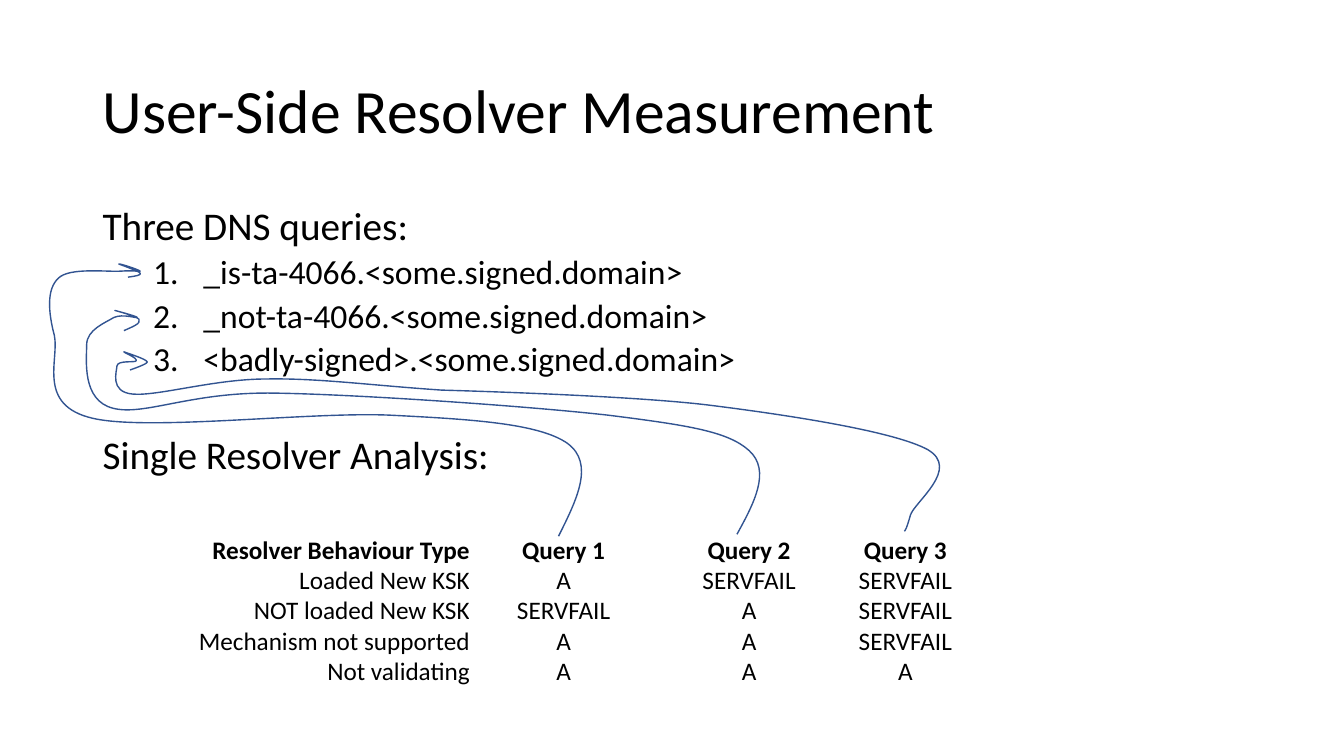
from dataclasses import dataclass

from lxml import etree
from pptx import Presentation
from pptx.dml.color import RGBColor
from pptx.enum.text import MSO_ANCHOR, PP_ALIGN
from pptx.oxml.ns import qn
from pptx.slide import Slide
from pptx.text.text import TextFrame, _Paragraph
from pptx.util import Emu, Pt

PX = 9144  # EMU per px, 100 px to the inch
MIDDLE = MSO_ANCHOR.MIDDLE
TOP = MSO_ANCHOR.TOP
RIGHT = PP_ALIGN.RIGHT
CENTER = PP_ALIGN.CENTER

Point = tuple[int, int]


@dataclass(frozen=True)
class Theme:
    font: str = "Calibri"
    text: RGBColor = RGBColor(0, 0, 0)
    arrow: RGBColor = RGBColor(0x32, 0x54, 0x91)
    title_size: int = 44
    heading_size: int = 28
    query_size: int = 24
    table_size: int = 18


@dataclass(frozen=True)
class Box:
    left: int
    top: int
    width: int
    height: int

    def emu(self) -> tuple[Emu, Emu, Emu, Emu]:
        return px(self.left), px(self.top), px(self.width), px(self.height)


@dataclass(frozen=True)
class Line:
    text: str
    size: int
    space_before: int = 0
    numbered: bool = False


@dataclass(frozen=True)
class Arrow:
    """A hand-drawn arrow: a start, then two controls and an end for each curve."""
    start: Point
    curves: tuple[tuple[Point, Point, Point], ...]


THEME = Theme()
TITLE_BOX = Box(92, 40, 1150, 145)
BODY_BOX = Box(92, 200, 1150, 476)
TABLE_BOX = Box(194, 531, 768, 150)
COLUMN_WIDTHS = (272, 186, 182, 128)

TITLE = (Line("User-Side Resolver Measurement", THEME.title_size),)
BODY = (
    Line("Three DNS queries:", THEME.heading_size, 10),
    Line("_is-ta-4066.<some.signed.domain>", THEME.query_size, 5, True),
    Line("_not-ta-4066.<some.signed.domain>", THEME.query_size, 5, True),
    Line("<badly-signed>.<some.signed.domain>", THEME.query_size, 5, True),
    Line("Single Resolver Analysis:", THEME.heading_size, 41),
)
RESULTS = (
    ("Resolver Behaviour Type", "Query 1", "Query 2", "Query 3"),
    ("Loaded New KSK", "A", "SERVFAIL", "SERVFAIL"),
    ("NOT loaded New KSK", "SERVFAIL", "A", "SERVFAIL"),
    ("Mechanism not supported", "A", "A", "SERVFAIL"),
    ("Not validating", "A", "A", "A"),
)
ARROWS = (
    Arrow((554, 532), (
        ((572, 496), (590, 460), (563, 440)),
        ((535, 420), (467, 416), (389, 412)),
        ((310, 408), (148, 428), (92, 415)),
        ((36, 402), (59, 357), (54, 333)),
        ((48, 310), (46, 287), (58, 276)),
        ((69, 265), (107, 270), (120, 269)),
        ((134, 268), (140, 270), (139, 269)),
        ((139, 268), (118, 261), (118, 262)),
        ((118, 262), (138, 269), (139, 271)),
        ((141, 273), (134, 274), (127, 275)),
    )),
    Arrow((731, 530), (
        ((748, 499), (765, 467), (743, 447)),
        ((722, 428), (683, 422), (604, 412)),
        ((525, 403), (352, 391), (270, 390)),
        ((188, 389), (143, 413), (112, 405)),
        ((81, 397), (86, 357), (86, 342)),
        ((86, 327), (105, 320), (113, 315)),
        ((122, 311), (136, 316), (136, 315)),
        ((137, 314), (114, 308), (114, 308)),
        ((114, 308), (137, 314), (138, 317)),
        ((140, 321), (132, 324), (123, 328)),
    )),
    Arrow((897, 527), (
        ((898, 526), (899, 525), (903, 511)),
        ((907, 498), (953, 465), (920, 446)),
        ((887, 428), (784, 412), (704, 402)),
        ((624, 392), (438, 387), (438, 387)),
        ((365, 382), (315, 375), (264, 376)),
        ((213, 376), (157, 393), (132, 391)),
        ((108, 389), (116, 368), (116, 363)),
        ((117, 357), (134, 360), (135, 358)),
        ((137, 355), (121, 349), (123, 349)),
        ((125, 350), (145, 356), (146, 359)),
        ((147, 361), (129, 367), (129, 367)),
    )),
)


def px(length: int) -> Emu:
    return Emu(length * PX)


def style(paragraph: _Paragraph, size: int, bold: bool = False) -> None:
    font = paragraph.font
    font.name = THEME.font
    font.size = Pt(size)
    font.bold = bold
    font.color.rgb = THEME.text


def number(paragraph: _Paragraph) -> None:
    properties = paragraph._p.get_or_add_pPr()
    properties.set("marL", str(px(100)))
    properties.set("indent", str(px(-50)))
    bullet = etree.Element(qn("a:buAutoNum"), type="arabicPeriod")
    properties.find(qn("a:defRPr")).addprevious(bullet)


def write_lines(frame: TextFrame, lines: tuple[Line, ...]) -> None:
    for index, line in enumerate(lines):
        paragraph = frame.add_paragraph() if index else frame.paragraphs[0]
        paragraph.text = line.text
        paragraph.line_spacing = 0.9
        paragraph.space_before = Pt(line.space_before)
        style(paragraph, line.size)
        if line.numbered:
            number(paragraph)


def add_text(slide: Slide, box: Box, lines: tuple[Line, ...], anchor: MSO_ANCHOR) -> None:
    frame = slide.shapes.add_textbox(*box.emu()).text_frame
    frame.word_wrap = True
    frame.vertical_anchor = anchor
    write_lines(frame, lines)


def add_results(slide: Slide) -> None:
    table = slide.shapes.add_table(len(RESULTS), len(COLUMN_WIDTHS), *TABLE_BOX.emu()).table
    table.first_row = False
    table.horz_banding = False
    for column, width in zip(table.columns, COLUMN_WIDTHS):
        column.width = px(width)
    for row, values in enumerate(RESULTS):
        for column, value in enumerate(values):
            cell = table.cell(row, column)
            cell.fill.background()
            cell.margin_left = cell.margin_right = 0
            cell.margin_top = cell.margin_bottom = 0
            cell.text = value
            paragraph = cell.text_frame.paragraphs[0]
            paragraph.alignment = CENTER if column else RIGHT
            style(paragraph, THEME.table_size, bold=row == 0)


def add_arrow(slide: Slide, arrow: Arrow) -> None:
    """Lay out all points as segments, then join each three into a Bézier curve."""
    builder = slide.shapes.build_freeform(*arrow.start, scale=PX)
    builder.add_line_segments([point for curve in arrow.curves for point in curve], close=False)
    shape = builder.convert_to_shape()
    segments = shape._element.xpath(".//a:lnTo")
    for first in range(0, len(segments), 3):
        curve = etree.Element(qn("a:cubicBezTo"))
        segments[first].addprevious(curve)
        for segment in segments[first:first + 3]:
            curve.append(segment[0])
            segment.getparent().remove(segment)
    shape.shadow.inherit = False
    shape.fill.background()
    shape.line.color.rgb = THEME.arrow
    shape.line.width = Pt(1)


def main() -> None:
    presentation = Presentation()
    presentation.slide_width = px(1333)
    presentation.slide_height = px(750)
    slide = presentation.slides.add_slide(presentation.slide_layouts[6])
    add_text(slide, TITLE_BOX, TITLE, MIDDLE)
    add_text(slide, BODY_BOX, BODY, TOP)
    add_results(slide)
    for arrow in ARROWS:
        add_arrow(slide, arrow)
    presentation.save("out.pptx")


if __name__ == "__main__":
    main()
